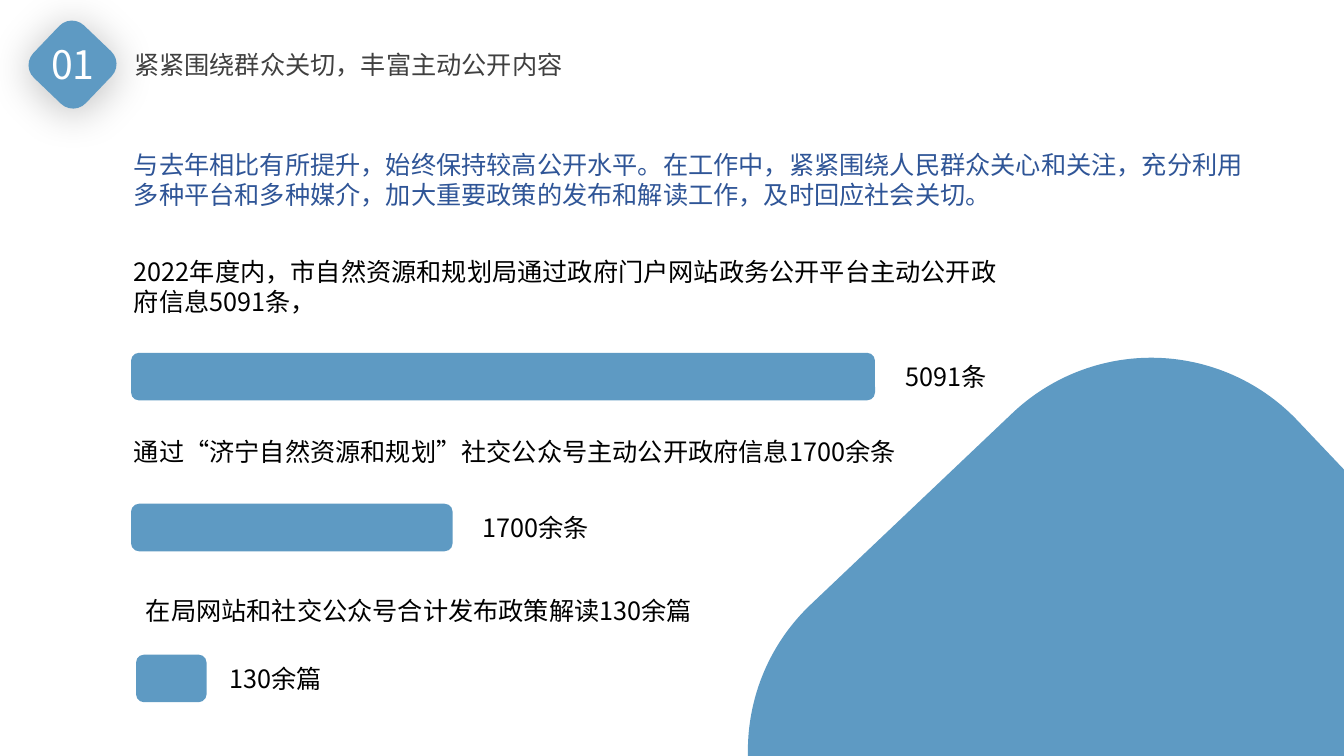
"""Build the slide on proactive disclosure of government information."""
from dataclasses import dataclass

import lxml.etree
import pptx
import pptx.dml.color
import pptx.enum.shapes
import pptx.enum.text
import pptx.oxml
import pptx.oxml.ns
import pptx.util

Pt = pptx.util.Pt
ALIGN = pptx.enum.text.PP_ALIGN
BLUE = "5E9AC3"
BLACK = "000000"
SANS_SC = "Noto Sans CJK SC"
SANS_JP = "Noto Sans CJK JP"
TEXT_LEFT = 88.6
LINE_HEIGHT = 28.8
FIRST_BAR_TOP = 252
BAR_PITCH = 107.8
BAR_HEIGHT = 34
VALUE_DROP = 2.5


@dataclass(frozen=True)
class Frame:
    left: float
    top: float
    width: float
    height: float

    def lengths(self) -> tuple:
        return tuple(Pt(side) for side in (self.left, self.top, self.width, self.height))


@dataclass(frozen=True)
class TextStyle:
    size: float = 18
    color: str = BLACK
    font: str = SANS_SC
    align: ALIGN = ALIGN.LEFT


@dataclass(frozen=True)
class Measure:
    caption: str
    caption_frame: Frame
    value: str
    value_left: float
    value_width: float
    bar_left: float
    bar_width: float


MEASURES = [
    Measure("2022年度内，市自然资源和规划局通过政府门户网站政务公开平台主动公开政府信息5091条，",
            Frame(TEXT_LEFT, 179.3, 645.8, 51), "5091条", 640, 116.6, 93.6, 531.4),
    Measure("通过“济宁自然资源和规划”社交公众号主动公开政府信息1700余条",
            Frame(TEXT_LEFT, 308.2, 645.8, LINE_HEIGHT), "1700余条", 337.7, 96.5, 93.6, 229.7),
    Measure("在局网站和社交公众号合计发布政策解读130余篇",
            Frame(97.2, 421.9, 528.5, LINE_HEIGHT), "130余篇", 157, 92.2, 97.2, 50.4),
]


def rgb(color: str) -> pptx.dml.color.RGBColor:
    return pptx.dml.color.RGBColor.from_string(color)


def write_text(box, text: str, style: TextStyle) -> None:
    text_frame = box.text_frame
    text_frame.word_wrap = True
    text_frame.auto_size = pptx.enum.text.MSO_AUTO_SIZE.SHAPE_TO_FIT_TEXT
    text_frame.vertical_anchor = pptx.enum.text.MSO_ANCHOR.TOP
    para = text_frame.paragraphs[0]
    para.alignment = style.align
    span = para.add_run()
    span.text = text
    span.font.size = Pt(style.size)
    span.font.name = style.font
    span.font.color.rgb = rgb(style.color)
    east_asian = lxml.etree.SubElement(span.font._element, pptx.oxml.ns.qn("a:ea"))
    east_asian.set("typeface", style.font)


def add_text(page, frame: Frame, text: str, style: TextStyle = TextStyle()) -> None:
    write_text(page.shapes.add_textbox(*frame.lengths()), text, style)


def add_rounded(page, frame: Frame, corner: float = 0.167, rotation: float = 0):
    shape = page.shapes.add_shape(
        pptx.enum.shapes.MSO_SHAPE.ROUNDED_RECTANGLE, *frame.lengths())
    shape.adjustments[0] = corner
    shape.rotation = rotation
    shape.fill.solid()
    shape.fill.fore_color.rgb = rgb(BLUE)
    shape.line.fill.background()
    shape.shadow.inherit = False
    return shape


def add_soft_shadow(shape) -> None:
    effects = shape._element.spPr.find(pptx.oxml.ns.qn("a:effectLst"))
    effects.append(pptx.oxml.parse_xml(
        f'<a:outerShdw {pptx.oxml.ns.nsdecls("a")} blurRad="{Pt(31)}" dist="{Pt(3)}" '
        'dir="5400000" algn="t" rotWithShape="0"><a:srgbClr val="000000">'
        '<a:alpha val="25000"/></a:srgbClr></a:outerShdw>'))


def add_measure(page, measure: Measure, bar_top: float) -> None:
    add_text(page, measure.caption_frame, measure.caption)
    add_rounded(page, Frame(measure.bar_left, bar_top, measure.bar_width, BAR_HEIGHT))
    add_text(page, Frame(measure.value_left, bar_top + VALUE_DROP,
                         measure.value_width, LINE_HEIGHT), measure.value)


def main() -> None:
    deck = pptx.Presentation()
    deck.slide_width, deck.slide_height = Pt(960), Pt(540)
    page = deck.slides.add_slide(deck.slide_layouts.get_by_name("Title Only"))

    title = page.shapes.title
    title.left, title.top, title.width, title.height = Frame(
        TEXT_LEFT, 31.7, 538.6, LINE_HEIGHT).lengths()
    write_text(title, "紧紧围绕群众关切，丰富主动公开内容", TextStyle(color="404040"))

    badge = add_rounded(page, Frame(25.9, 20.2, 51.8, 51.8), 0.241, 313.7)
    add_soft_shadow(badge)
    add_rounded(page, Frame(575.3, 296.6, 486.7, 486.7), 0.296, 316.5)
    add_text(page, Frame(26.6, 25.2, 51.1, 41), "01",
             TextStyle(size=28, color="FFFFFF", align=ALIGN.CENTER))

    for index, measure in enumerate(MEASURES):
        add_measure(page, measure, FIRST_BAR_TOP + index * BAR_PITCH)

    add_text(page, Frame(TEXT_LEFT, 103, 815.8, 51),
             "与去年相比有所提升，始终保持较高公开水平。在工作中，紧紧围绕人民群众关心和关注，"
             "充分利用多种平台和多种媒介，加大重要政策的发布和解读工作，及时回应社会关切。",
             TextStyle(color="2F5597", font=SANS_JP))
    deck.save("out.pptx")


if __name__ == "__main__":
    main()
